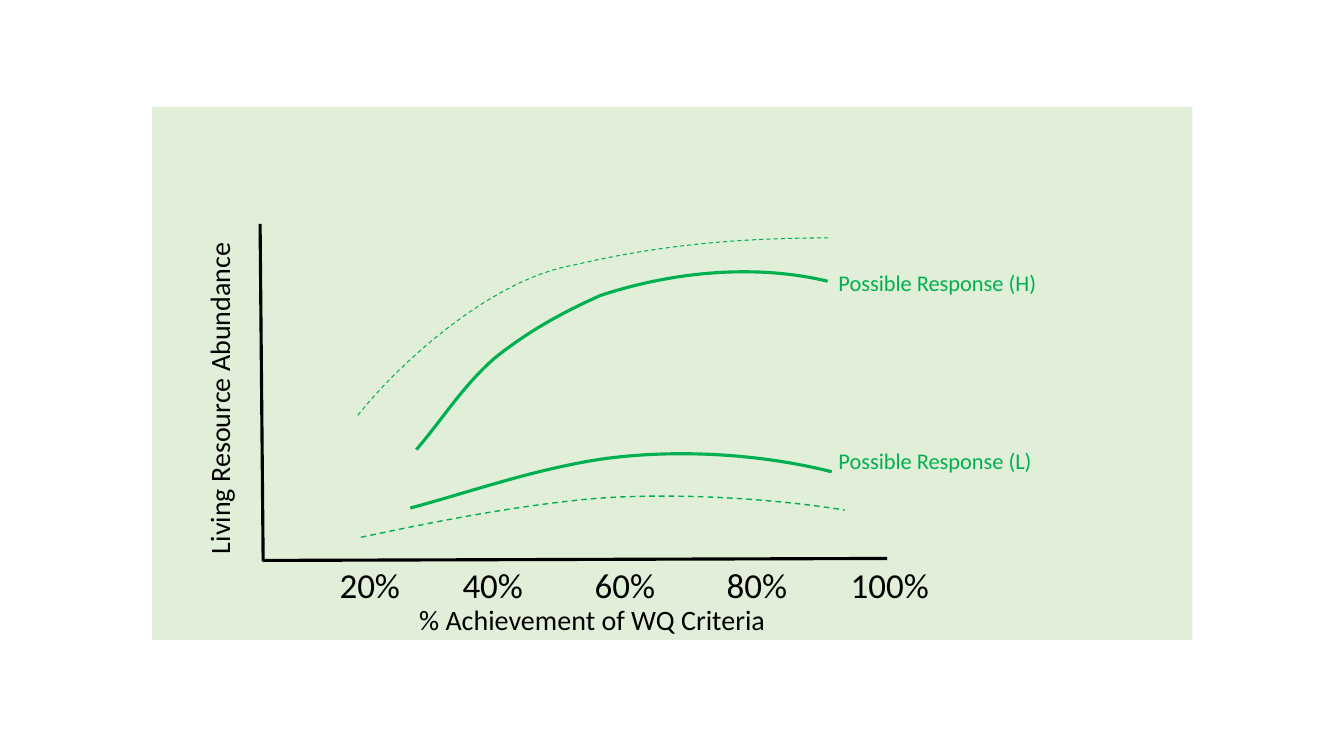
from dataclasses import dataclass

from pptx import Presentation
from pptx.dml.color import RGBColor
from pptx.enum.dml import MSO_LINE
from pptx.enum.shapes import MSO_SHAPE
from pptx.oxml.ns import qn
from pptx.oxml.xmlchemy import OxmlElement
from pptx.util import Inches, Pt


@dataclass(frozen=True)
class Theme:
    font: str = "Calibri"
    panel: RGBColor = RGBColor(0xE1, 0xEF, 0xD8)
    ink: RGBColor = RGBColor(0, 0, 0)
    response: RGBColor = RGBColor(0x00, 0xB0, 0x50)
    tick_size: int = 25
    title_size: int = 20
    label_size: int = 16
    heavy: float = 2.25


class Sketch:
    """Draws on one slide, with every length in percent of the slide's size."""

    def __init__(self, deck, theme):
        self.theme = theme
        self.width, self.height = deck.slide_width, deck.slide_height
        self.shapes = deck.slides.add_slide(deck.slide_layouts[6]).shapes

    def x(self, share):
        return round(self.width * share / 100)

    def y(self, share):
        return round(self.height * share / 100)

    def box(self, left, top, width, height):
        return self.x(left), self.y(top), self.x(width), self.y(height)

    def panel(self, *box):
        panel = self.shapes.add_shape(MSO_SHAPE.RECTANGLE, *self.box(*box))
        panel.shadow.inherit = False
        panel.fill.solid()
        panel.fill.fore_color.rgb = self.theme.panel
        panel.line.fill.background()

    def stroke(self, points, color, weight, dashed=False):
        start, *rest = [(self.x(x), self.y(y)) for x, y in points]
        builder = self.shapes.build_freeform(*start)
        builder.add_line_segments(rest, close=False)
        stroke = builder.convert_to_shape()
        stroke.shadow.inherit = False
        stroke.fill.background()
        stroke.line.color.rgb = color
        stroke.line.width = Pt(weight)
        if dashed:
            stroke.line.dash_style = MSO_LINE.DASH
        return stroke

    def curve(self, points, weight, dashed=False):
        stroke = self.stroke(points, self.theme.response, weight, dashed)
        segments = list(stroke._element.iter(qn("a:lnTo")))
        for first in range(0, len(segments), 3):
            bezier = OxmlElement("a:cubicBezTo")
            segments[first].addprevious(bezier)
            for segment in segments[first:first + 3]:
                bezier.append(segment[0])
                segment.getparent().remove(segment)

    def text(self, words, box, size, color, rotation=0, tabs=()):
        label = self.shapes.add_textbox(*self.box(*box))
        label.rotation = rotation
        label.text_frame.word_wrap = True
        paragraph = label.text_frame.paragraphs[0]
        paragraph.text = words
        if tabs:
            stops = OxmlElement("a:tabLst")
            paragraph._p.get_or_add_pPr().append(stops)
            for share in tabs:
                stop = OxmlElement("a:tab")
                stop.set("pos", str(self.x(share)))
                stop.set("algn", "l")
                stops.append(stop)
        paragraph.font.name = self.theme.font
        paragraph.font.size = Pt(size)
        paragraph.font.color.rgb = color


def main():
    deck = Presentation()
    deck.slide_width, deck.slide_height = Inches(13.33), Inches(7.5)
    theme = Theme()
    sketch = Sketch(deck, theme)

    sketch.panel(11.33, 14.13, 77.4, 70.53)
    axes = [(19.35, 29.6), (19.58, 74.13), (66, 73.87)]
    sketch.stroke(axes, theme.ink, theme.heavy)

    upper_bound = [(26.63, 54.93), (29.78, 47.87), (36.6, 36.93), (42.68, 35.07),
                   (48.75, 32.53), (54.6, 31.47), (61.65, 31.47)]
    lower_bound = [(26.85, 71.07), (32.18, 69.07), (37.43, 67.2), (43.13, 66.13),
                   (48.83, 65.07), (56.78, 65.73), (62.85, 67.47)]
    low_response = [(30.53, 67.2), (35.25, 64.93), (39.38, 62.27), (44.48, 60.8),
                    (49.5, 59.47), (55.88, 59.73), (61.88, 62.4)]
    high_response = [(30.98, 59.47), (32.93, 55.47), (34.35, 51.2), (36.83, 47.33),
                     (39, 44.27), (41.33, 41.73), (44.7, 39.07),
                     (50.18, 35.87), (56.25, 34.93), (61.58, 37.2)]
    sketch.curve(upper_bound, 0.75, dashed=True)
    sketch.curve(lower_bound, 1, dashed=True)
    for response in (low_response, high_response):
        sketch.curve(response, theme.heavy)

    for level, top in (("L", 58.53), ("H", 34.93)):
        sketch.text(f"Possible Response ({level})", (61.65, top, 25.95, 4.93),
                    theme.label_size, theme.response)
    sketch.text("Living Resource Abundance", (2.1, 46.4, 28.43, 5.87),
                theme.title_size, theme.ink, rotation=270)
    sketch.text("20%\t40%\t60%\t80%\t100%", (24.53, 73.87, 45.75, 6.93),
                theme.tick_size, theme.ink, tabs=(9.15, 18.98, 28.8, 38.03))
    sketch.text("% Achievement of WQ Criteria", (30.45, 79.07, 35.63, 5.87),
                theme.title_size, theme.ink)

    deck.save("out.pptx")


if __name__ == "__main__":
    main()
